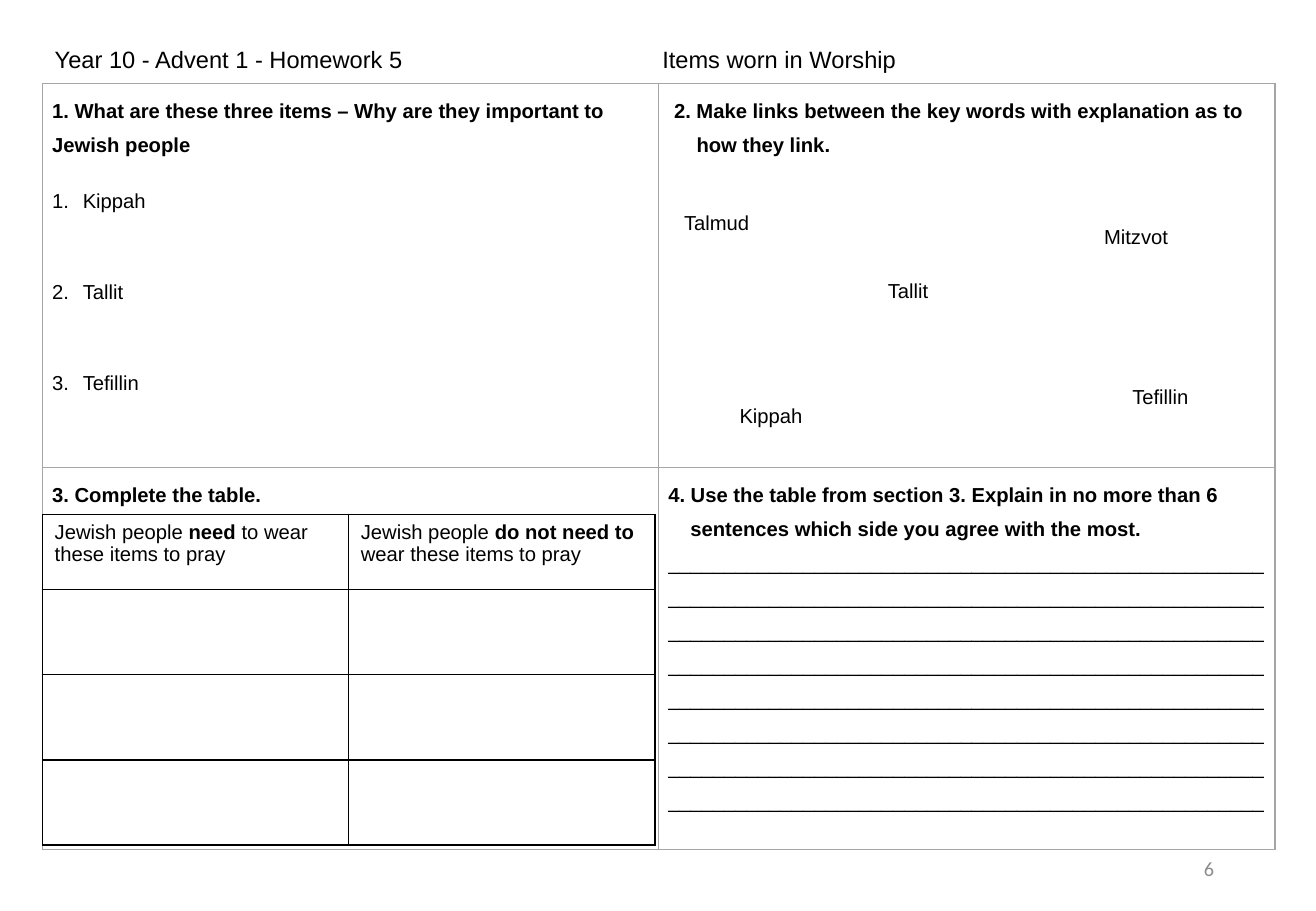
from dataclasses import dataclass

import pptx
import pptx.dml.color
import pptx.enum.text
import pptx.oxml
import pptx.oxml.ns
import pptx.util

Cm = pptx.util.Cm
Pt = pptx.util.Pt
Anchor = pptx.enum.text.MSO_ANCHOR
Align = pptx.enum.text.PP_ALIGN


@dataclass(frozen=True)
class Theme:
    font: str = "Arial"
    number_font: str = "Calibri"
    ink: str = "000000"
    paper: str = "FFFFFF"
    frame: str = "A6A6A6"
    page_number: str = "8C8C8C"
    title_size: int = 14
    body_size: int = 12


THEME = Theme()
LEFT = 0.89
FRAME_TOP = 1.75
TITLE = "Year 10 - Advent 1 - Homework 5\tItems worn in Worship"
ITEMS = ["Kippah", "Tallit", "Tefillin"]
KEY_WORDS = {
    "Talmud": (14.05, 4.27),
    "Mitzvot": (22.83, 4.57),
    "Tallit": (18.31, 5.69),
    "Kippah": (15.21, 8.31),
    "Tefillin": (23.42, 7.92),
}
VIEWS = [
    [("Jewish people ", False), ("need", True), (" to wear these items to pray", False)],
    [("Jewish people ", False), ("do not need to ", True), ("wear these items to pray", False)],
]
HEADING = {"line_spacing": 1.5}
ANSWER_LENGTH = 424  # underscores: eight full lines and a short one


def rgb(value):
    return pptx.dml.color.RGBColor.from_string(value)


def apply(target, values):
    for name, value in values.items():
        setattr(target, name, value)


def write(paragraph, runs, size=THEME.body_size, font=THEME.font,
          color=THEME.ink, **paragraph_format):
    """Add (text, bold) runs to a paragraph and format it."""
    apply(paragraph, paragraph_format)
    for text, bold in runs:
        run = paragraph.add_run()
        run.text = text
        apply(run.font, {"size": Pt(size), "name": font, "bold": bold})
        run.font.color.rgb = rgb(color)


def add_property(paragraph, xml):
    namespace = pptx.oxml.ns.nsdecls("a")
    element = pptx.oxml.parse_xml(xml.replace("/>", f" {namespace}/>", 1)
                                  if xml.endswith("/>") and xml.count("<") == 1
                                  else xml.replace(">", f" {namespace}>", 1))
    paragraph._p.get_or_add_pPr().append(element)


def hang(paragraph, margin, hanging):
    """Indent a paragraph, with its first line set back."""
    properties = paragraph._p.get_or_add_pPr()
    properties.set("marL", str(Cm(margin)))
    properties.set("indent", str(-Cm(hanging)))


def add_title(slide):
    title = slide.shapes.title
    apply(title, {"left": Cm(LEFT), "top": Cm(0.51), "width": Cm(26.31), "height": Cm(1.24)})
    title.fill.solid()
    title.fill.fore_color.rgb = rgb(THEME.paper)
    apply(title.text_frame, {"vertical_anchor": Anchor.TOP, "word_wrap": True,
                             "auto_size": pptx.enum.text.MSO_AUTO_SIZE.NONE})
    paragraph = title.text_frame.paragraphs[0]
    write(paragraph, [(TITLE, False)], THEME.title_size, alignment=Align.LEFT, **HEADING)
    add_property(paragraph, f'<a:tabLst><a:tab pos="{Cm(12.7)}" algn="l"/></a:tabLst>')


def add_label(slide, text, left, top, width=3.78, height=0.76, anchor=Anchor.TOP, **text_format):
    box = slide.shapes.add_textbox(Cm(left), Cm(top), Cm(width), Cm(height))
    apply(box.text_frame, {"word_wrap": True, "vertical_anchor": anchor})
    write(box.text_frame.paragraphs[0], [(text, False)], **text_format)


def set_borders(cell, color):
    properties = cell._tc.get_or_add_tcPr()
    for side in ("lnL", "lnR", "lnT", "lnB"):
        properties.append(pptx.oxml.parse_xml(
            f'<a:{side} {pptx.oxml.ns.nsdecls("a")} w="{Pt(1)}"><a:solidFill>'
            f'<a:srgbClr val="{color}"/></a:solidFill></a:{side}>'))


def add_grid(slide, top, column_width, row_heights, border, filled):
    """Add a two-column ruled table at the left margin."""
    table = slide.shapes.add_table(
        len(row_heights), 2, Cm(LEFT), Cm(top),
        Cm(2 * column_width), Cm(sum(row_heights))).table
    apply(table, {"first_row": False, "horz_banding": False})
    for column in table.columns:
        column.width = Cm(column_width)
    for row, height in zip(table.rows, row_heights):
        row.height = Cm(height)
    for cell in table.iter_cells():
        set_borders(cell, border)
        if filled:
            cell.fill.solid()
            cell.fill.fore_color.rgb = rgb(THEME.paper)
        else:
            cell.fill.background()
    return table


def add_question(cell, text, margin=0, hanging=0):
    apply(cell, {"margin_left": Cm(0.2), "margin_right": Cm(0.2),
                 "margin_top": Cm(0.1), "margin_bottom": Cm(0.1)})
    paragraph = cell.text_frame.paragraphs[0]
    write(paragraph, [(text, True)], **HEADING)
    hang(paragraph, margin, hanging)


def add_questions(slide):
    frame = add_grid(slide, FRAME_TOP, 12.88, [8.03, 7.98], THEME.frame, filled=False)
    items, links = frame.cell(0, 0), frame.cell(0, 1)
    views, answer = frame.cell(1, 0), frame.cell(1, 1)
    add_question(items, "1. What are these three items – Why are they important to Jewish people")
    add_question(links, "2. Make links between the key words with explanation as to "
                        "how they link.", 0.59, 0.47)
    add_question(views, "3. Complete the table.")
    add_question(answer, "4. Use the table from section 3. Explain in no more than 6 "
                         "sentences which side you agree with the most.", 0.46, 0.46)

    for index, item in enumerate(ITEMS):
        paragraph = items.text_frame.add_paragraph()
        write(paragraph, [(item, False)], space_before=Pt(40.5 if index else 20))
        hang(paragraph, 0.64, 0.64)
        add_property(paragraph, '<a:buAutoNum type="arabicPeriod"/>')
    write(answer.text_frame.add_paragraph(), [("_" * ANSWER_LENGTH, False)], **HEADING)


def add_views(slide):
    table = add_grid(slide, 10.76, 6.4, [1.57] + [1.78] * 3, THEME.ink, filled=True)
    for column, runs in enumerate(VIEWS):
        write(table.cell(0, column).text_frame.paragraphs[0], runs)


def main():
    deck = pptx.Presentation()
    apply(deck, {"slide_width": Cm(27.51), "slide_height": Cm(19.05)})
    slide = deck.slides.add_slide(deck.slide_layouts.get_by_name("Title Only"))
    add_label(slide, "6", 19.43, 17.65, 6.2, 1.02, Anchor.MIDDLE, font=THEME.number_font,
              color=THEME.page_number, alignment=Align.RIGHT)
    add_title(slide)
    add_questions(slide)
    for word, (left, top) in KEY_WORDS.items():
        add_label(slide, word, left, top)
    add_views(slide)
    deck.save("out.pptx")


if __name__ == "__main__":
    main()
